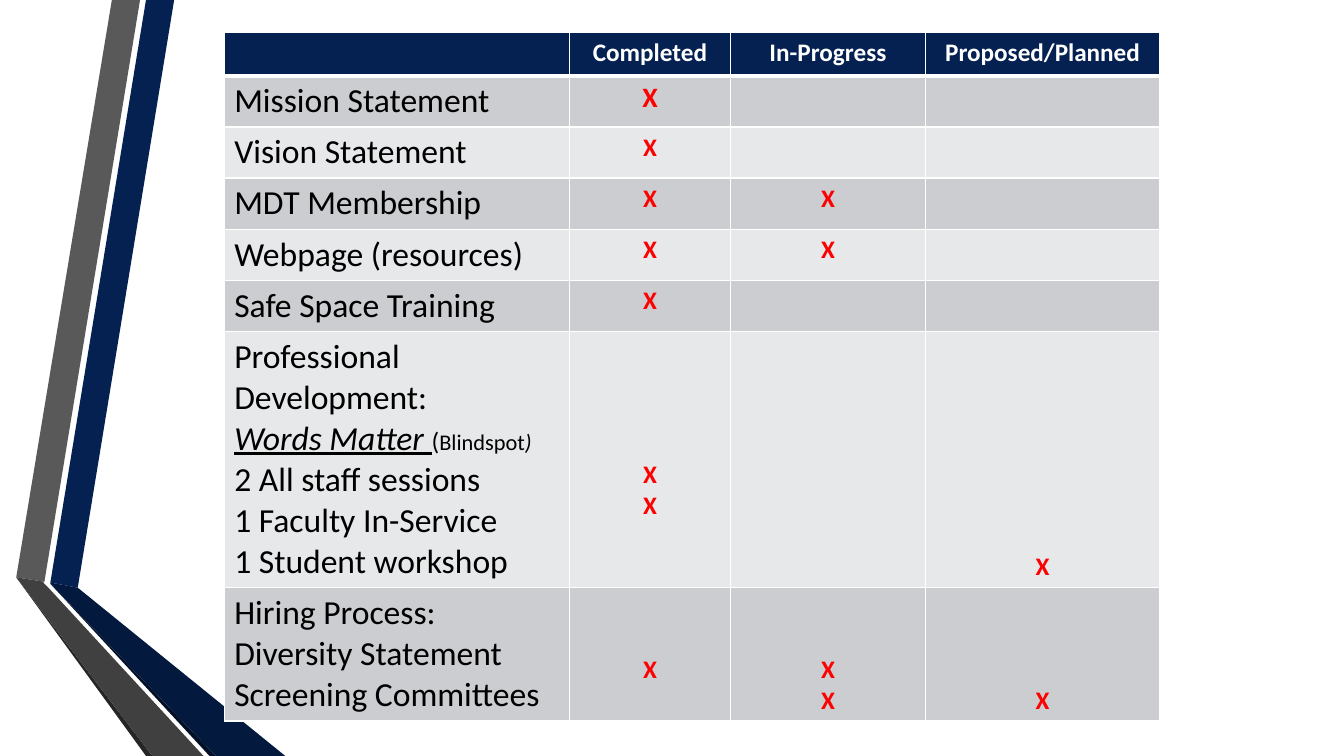
from dataclasses import dataclass

from lxml import etree
from pptx import Presentation
from pptx.dml.color import RGBColor
from pptx.enum.text import PP_ALIGN
from pptx.oxml.ns import qn
from pptx.util import Cm, Pt

CENTER, LEFT = PP_ALIGN.CENTER, PP_ALIGN.LEFT


@dataclass(frozen=True)
class Theme:
    font: str = "Calibri"
    navy: str = "042151"
    navy_dark: str = "03193D"
    navy_edge: str = "021028"
    grey: str = "595959"
    grey_dark: str = "404040"
    grey_edge: str = "262626"
    white: str = "FFFFFF"
    black: str = "000000"
    red: str = "FF0000"
    bands: tuple = ("CCCDD0", "E7E8E9")
    label_size: int = 24
    mark_size: int = 18
    big_mark_size: int = 20
    note_size: int = 16
    thin: int = 1
    thick: int = 3


THEME = Theme()
MARK_LINE = 0.775  # height in cm of one line of marks
CELL_MARGIN = 0.13

# Ribbon pieces: colour and corner points in cm
RIBBONS = [
    (THEME.navy, [(1.27, 14.68), (1.96, 14.81), (4.39, 0), (3.68, 0)]),
    (THEME.grey, [(3.53, 0), (2.82, 0), (0.41, 14.55), (1.12, 14.66)]),
    (THEME.grey_edge, [(0.41, 14.55), (3.68, 19.05), (3.84, 19.05)]),
    (THEME.navy_edge, [(1.27, 14.71), (5.28, 19.05), (5.44, 19.05)]),
    (THEME.navy_dark, [(1.27, 14.71), (5.44, 19.05), (7.19, 19.05),
                       (1.96, 14.81), (1.27, 14.68)]),
    (THEME.grey_dark, [(5.13, 19.05), (1.22, 14.81), (1.09, 14.68),
                       (1.12, 14.66), (0.41, 14.55), (3.84, 19.05)]),
]

HEADERS = ["", "Completed", "In-Progress", "Proposed/Planned"]
COL_WIDTHS = [8.71, 4.04, 4.93, 5.89]
ROW_HEIGHT = 1.09

WORKSHOP_TITLE = [
    ("Words Matter ", {"italic": True, "underline": True}),
    ("(", {"size": Pt(THEME.mark_size)}),
    ("Blindspot", {"size": Pt(THEME.note_size)}),
    (")", {"size": Pt(THEME.note_size), "italic": True}),
]

# Label lines, then for each marked column: (lines to skip, number of marks)
TASKS = [
    (["Mission Statement"], {1: (0, 1)}),
    (["Vision Statement"], {1: (0, 1)}),
    (["MDT Membership"], {1: (0, 1), 2: (0, 1)}),
    (["Webpage (resources)"], {1: (0, 1), 2: (0, 1)}),
    (["Safe Space Training"], {1: (0, 1)}),
    (["Professional Development:", WORKSHOP_TITLE, "2 All staff sessions",
      "1 Faculty In-Service", "1 Student workshop"],
     {1: (4, 2), 3: (7, 1)}),
    (["Hiring Process:", "Diversity Statement", "Screening Committees"],
     {1: (2, 1), 2: (2, 2), 3: (3, 1)}),
]


class SlideBuilder:
    def __init__(self, slide, theme):
        self.slide = slide
        self.theme = theme

    def ribbon(self, color, points):
        corners = [(Cm(x), Cm(y)) for x, y in points]
        builder = self.slide.shapes.build_freeform(*corners[0], scale=1.0)
        builder.add_line_segments(corners[1:], close=True)
        sp = builder.convert_to_shape()
        sp.shadow.inherit = False
        sp.fill.solid()
        sp.fill.fore_color.rgb = RGBColor.from_string(color)
        sp.line.fill.background()

    def table(self, left, top, widths, row_count, row_height):
        frame = self.slide.shapes.add_table(
            row_count, len(widths), Cm(left), Cm(top),
            Cm(sum(widths)), Cm(row_height * row_count))
        table = frame.table
        for column, width in zip(table.columns, widths):
            column.width = Cm(width)
        return table

    def cell(self, cell, fill, top_line, bottom_line):
        cell.fill.solid()
        cell.fill.fore_color.rgb = RGBColor.from_string(fill)
        props = cell._tc.get_or_add_tcPr()
        thin = self.theme.thin
        sides = {"a:lnL": thin, "a:lnR": thin, "a:lnT": top_line, "a:lnB": bottom_line}
        for i, (tag, width) in enumerate(sides.items()):
            line = etree.Element(qn(tag), w=str(Pt(width)))
            solid = etree.SubElement(line, qn("a:solidFill"))
            etree.SubElement(solid, qn("a:srgbClr"), val=self.theme.white)
            props.insert(i, line)  # borders come before the fill

    def text(self, cell, lines, color, align=LEFT, **font):
        """Write lines; each is a string or a list of (string, font values)."""
        tf = cell.text_frame
        for i, line in enumerate(lines):
            p = tf.paragraphs[0] if i == 0 else tf.add_paragraph()
            p.alignment = align
            for words, extra in [(line, {})] if isinstance(line, str) else line:
                r = p.add_run()
                r.text = words
                values = {"name": self.theme.font, "bold": False, **font, **extra}
                for name, value in values.items():
                    setattr(r.font, name, value)
                r.font.color.rgb = RGBColor.from_string(color)

    def marks(self, cell, skip, count, size):
        cell.margin_top = Cm(CELL_MARGIN + skip * MARK_LINE)
        self.text(cell, ["X"] * count, self.theme.red, CENTER, size=Pt(size), bold=True)


def main():
    prs = Presentation()
    prs.slide_width, prs.slide_height = Cm(33.87), Cm(19.05)
    s = SlideBuilder(prs.slides.add_slide(prs.slide_layouts[6]), THEME)

    for color, points in RIBBONS:
        s.ribbon(color, points)

    table = s.table(5.65, 0.82, COL_WIDTHS, len(TASKS) + 1, ROW_HEIGHT)
    for col, header in enumerate(HEADERS):
        cell = table.cell(0, col)
        s.cell(cell, THEME.navy, THEME.thin, THEME.thick)
        if header:
            s.text(cell, [header], THEME.white, CENTER,
                   size=Pt(THEME.mark_size), bold=True)

    for row, (label, marks) in enumerate(TASKS, start=1):
        first = row == 1
        for col in range(len(HEADERS)):
            s.cell(table.cell(row, col), THEME.bands[(row - 1) % 2],
                   THEME.thick if first else THEME.thin, THEME.thin)
        s.text(table.cell(row, 0), label, THEME.black, size=Pt(THEME.label_size))
        for col, (skip, count) in marks.items():
            s.marks(table.cell(row, col), skip, count,
                    THEME.big_mark_size if first else THEME.mark_size)

    prs.save("out.pptx")


if __name__ == "__main__":
    main()
